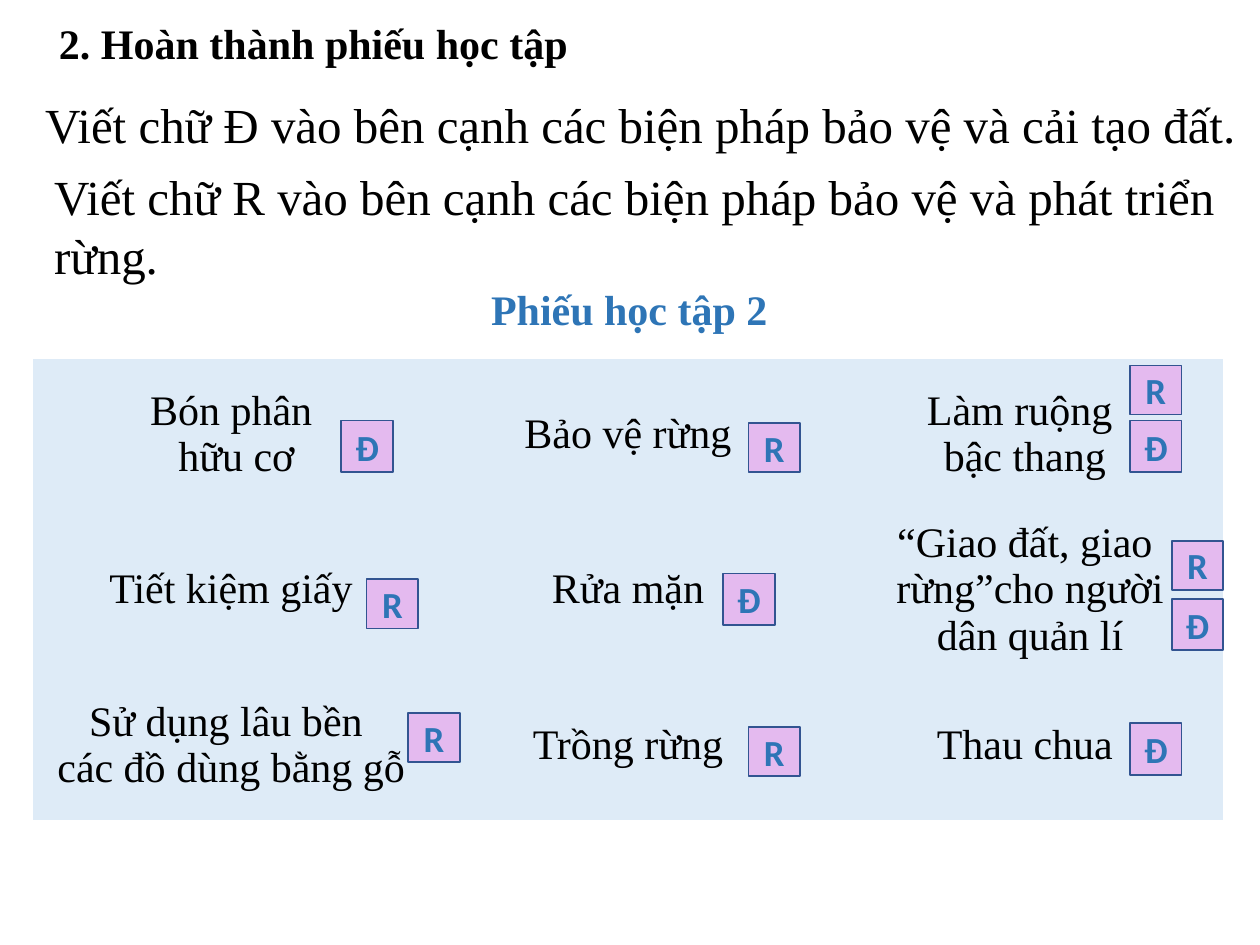
from dataclasses import dataclass

from pptx import Presentation
from pptx.dml.color import RGBColor
from pptx.enum.shapes import MSO_SHAPE
from pptx.enum.text import MSO_ANCHOR, PP_ALIGN
from pptx.util import Cm, Pt


@dataclass(frozen=True)
class Theme:
    serif: str = "Times New Roman"
    sans: str = "Calibri"
    ink: str = "000000"
    accent: str = "2E75B6"
    cell: str = "DEEBF7"
    badge: str = "E4BAEF"
    badge_line: str = "325491"
    heading: int = 24
    task: int = 28
    answer: int = 21


T = Theme()

# text, (left, top, width, height) in cm, format
TEXTS = [
    ("2. Hoàn thành phiếu học tập", (0.94, 0.23, 11.76, 1.27),
     dict(size=T.heading, bold=True)),
    ("Viết chữ R vào bên cạnh các biện pháp bảo vệ và phát triển rừng.",
     (0.84, 3.23, 24.31, 2.64), dict(size=T.task)),
    ("Viết chữ Đ vào bên cạnh các biện pháp bảo vệ và cải tạo đất.",
     (0.66, 1.78, 26.54, 1.45), dict(size=T.task)),
    ("Phiếu học tập 2", (9.65, 5.59, 6.63, 1.27),
     dict(size=T.heading, bold=True, color=T.accent)),
]

MEASURES = [
    ["Bón phân\n hữu cơ", "Bảo vệ rừng", "Làm ruộng \nbậc thang"],
    ["Tiết kiệm giấy", "Rửa mặn", "“Giao đất, giao\n rừng”cho người\n dân quản lí"],
    ["Sử dụng lâu bền \ncác đồ dùng bằng gỗ", "Trồng rừng", "Thau chua"],
]
TABLE_LEFT, TABLE_TOP = 0.66, 7.24
COL_WIDTH = 8.0
ROW_HEIGHTS = [3.02, 3.23, 3.02]
NO_STYLE_NO_GRID = "{2D5ABB26-0587-4C30-8999-92F81FD0307C}"

# left and top of each answer, in cm
ANSWERS = {
    "R": [(15.09, 8.53), (22.78, 7.37), (7.39, 11.68), (23.62, 10.9),
          (8.23, 14.38), (15.09, 14.66)],
    "Đ": [(6.88, 8.48), (22.78, 8.48), (14.58, 11.56), (23.62, 12.07),
          (22.78, 14.58)],
}
BADGE_WIDTH = 1.04
BADGE_HEIGHTS = {"R": 0.99, "Đ": 1.04}


def rgb(color):
    return RGBColor.from_string(color)


def write(tf, text, size=T.heading, font=T.serif, color=T.ink, bold=False,
          align=None):
    """Fill the first paragraph; each newline becomes a line break."""
    p = tf.paragraphs[0]
    p.alignment = align
    for i, line in enumerate(text.split("\n")):
        if i:
            p.add_line_break()
        r = p.add_run()
        r.text = line
        r.font.name = font
        r.font.size = Pt(size)
        r.font.bold = bold
        r.font.color.rgb = rgb(color)


def add_text(s, text, box, **fmt):
    tf = s.shapes.add_textbox(*map(Cm, box)).text_frame
    tf.word_wrap = True
    write(tf, text, **fmt)


def add_measures(s):
    rows, cols = len(MEASURES), len(MEASURES[0])
    frame = s.shapes.add_table(rows, cols, Cm(TABLE_LEFT), Cm(TABLE_TOP),
                               Cm(COL_WIDTH * cols), Cm(sum(ROW_HEIGHTS)))
    table = frame.table
    table.first_row = table.horz_banding = False
    table._tbl.tblPr[0].text = NO_STYLE_NO_GRID
    for col in table.columns:
        col.width = Cm(COL_WIDTH)
    for row, height, texts in zip(table.rows, ROW_HEIGHTS, MEASURES):
        row.height = Cm(height)
        for cell, text in zip(row.cells, texts):
            cell.fill.solid()
            cell.fill.fore_color.rgb = rgb(T.cell)
            cell.vertical_anchor = MSO_ANCHOR.MIDDLE
            cell.margin_left = cell.margin_right = Cm(0.18)
            cell.margin_top = cell.margin_bottom = Cm(0.1)
            write(cell.text_frame, text, align=PP_ALIGN.CENTER)


def add_badge(s, letter, left, top):
    sp = s.shapes.add_shape(MSO_SHAPE.RECTANGLE, Cm(left), Cm(top),
                            Cm(BADGE_WIDTH), Cm(BADGE_HEIGHTS[letter]))
    sp.shadow.inherit = False
    sp.fill.solid()
    sp.fill.fore_color.rgb = rgb(T.badge)
    sp.line.color.rgb = rgb(T.badge_line)
    sp.line.width = Pt(1)
    sp.text_frame.vertical_anchor = MSO_ANCHOR.MIDDLE
    write(sp.text_frame, letter, size=T.answer, font=T.sans, color=T.accent,
          bold=True, align=PP_ALIGN.CENTER)


def main():
    prs = Presentation()
    prs.slide_width, prs.slide_height = Cm(25.4), Cm(19.05)
    s = prs.slides.add_slide(prs.slide_layouts[6])
    for text, box, fmt in TEXTS:
        add_text(s, text, box, **fmt)
    add_measures(s)
    for letter, places in ANSWERS.items():
        for left, top in places:
            add_badge(s, letter, left, top)
    prs.save("out.pptx")


if __name__ == "__main__":
    main()
